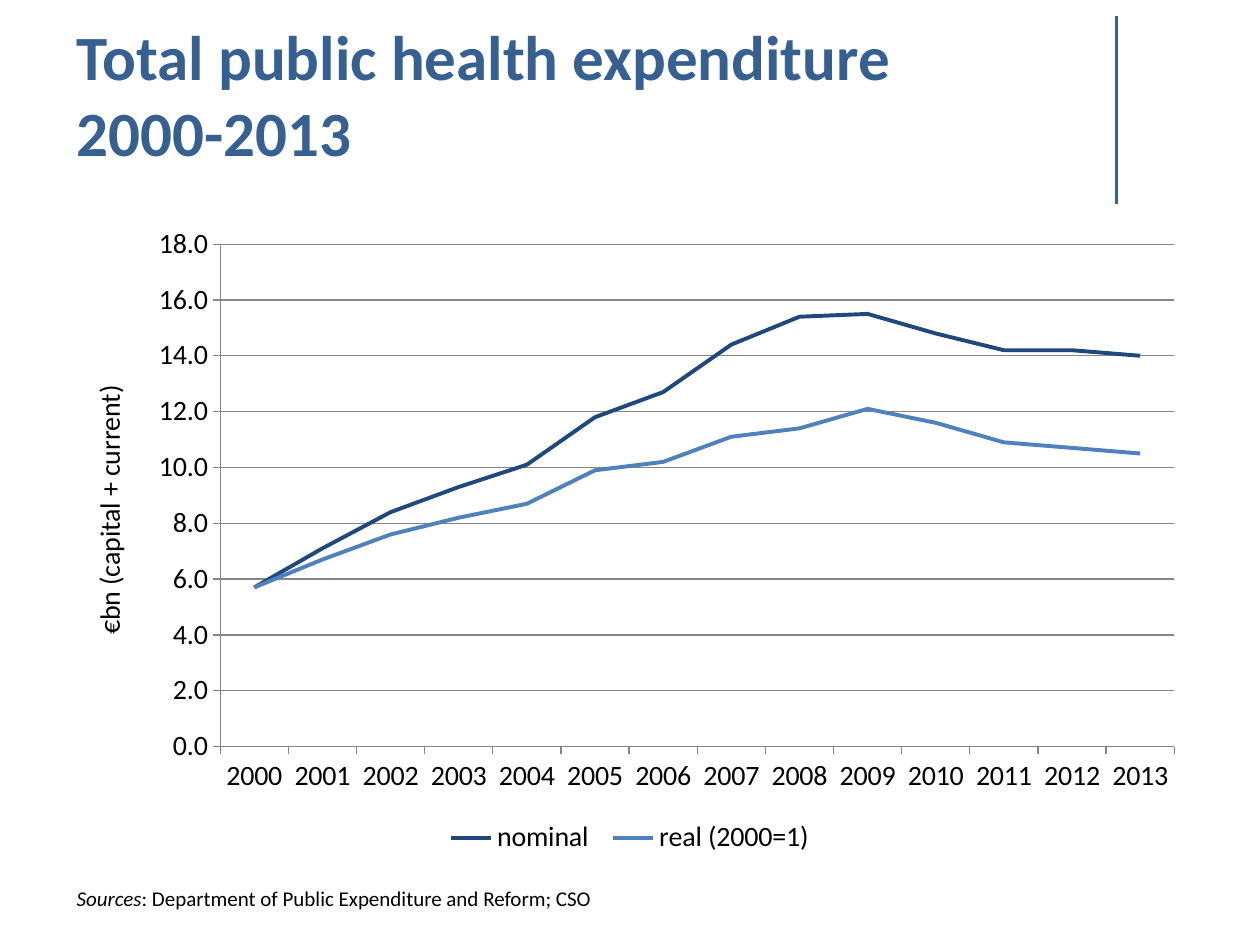
"""Build a slide with a line chart of public health expenditure."""
from lxml.etree import SubElement
from pptx import Presentation
from pptx.chart.data import CategoryChartData
from pptx.dml.color import RGBColor
from pptx.enum.chart import XL_CHART_TYPE, XL_LEGEND_POSITION, XL_TICK_MARK
from pptx.enum.shapes import MSO_CONNECTOR
from pptx.enum.text import MSO_ANCHOR, MSO_AUTO_SIZE, PP_ALIGN
from pptx.oxml.ns import qn
from pptx.util import Inches, Pt

BLUE = RGBColor(0x37, 0x60, 0x92)
NAVY = RGBColor(0x1F, 0x49, 0x7D)
SKY = RGBColor(0x4F, 0x81, 0xBD)
GREY = RGBColor(0x86, 0x86, 0x86)
BLACK = RGBColor(0, 0, 0)


def style(font, size, color, **extra):
    font.color.rgb = color
    for key, value in {"name": "Calibri", "size": Pt(size), **extra}.items():
        setattr(font, key, value)


deck = Presentation()
deck.slide_width, deck.slide_height = Inches(10), Inches(7.5)
slide = deck.slides.add_slide(deck.slide_layouts[5])

rule = slide.shapes.add_connector(
    MSO_CONNECTOR.STRAIGHT, Inches(8.86), Inches(0.13), Inches(8.86), Inches(1.62))
rule.line.color.rgb = BLUE
rule.line.width = Pt(1.5)
SubElement(rule._element.spPr, qn("a:effectLst"))

title = slide.shapes.title
place = {"left": 0.51, "top": 0.44, "width": 8.25, "height": 0.95}
for key, value in place.items():
    setattr(title, key, Inches(value))
frame = title.text_frame
frame.text = "Total public health expenditure\v2000-2013"
frame.auto_size = MSO_AUTO_SIZE.NONE
frame.vertical_anchor = MSO_ANCHOR.BOTTOM
head = frame.paragraphs[0]
head.alignment = PP_ALIGN.LEFT
for run in head.runs:
    style(run.font, 36, BLUE, bold=True)

data = CategoryChartData(number_format="#,##0.0")
data.categories = [str(year) for year in range(2000, 2014)]
data.add_series("nominal ", [5.7, 7.1, 8.4, 9.3, 10.1, 11.8, 12.7,
                             14.4, 15.4, 15.5, 14.8, 14.2, 14.2, 14])
data.add_series("real (2000=1)", [5.7, 6.7, 7.6, 8.2, 8.7, 9.9, 10.2,
                                  11.1, 11.4, 12.1, 11.6, 10.9, 10.7, 10.5])
chart = slide.shapes.add_chart(
    XL_CHART_TYPE.LINE, Inches(0.5), Inches(1.7), Inches(9), Inches(5.13), data).chart
style(chart.font, 16, BLACK)
chart.has_title = False
chart.has_legend = True
chart.legend.position = XL_LEGEND_POSITION.BOTTOM
chart.legend.include_in_layout = False
chart.plots[0].vary_by_categories = False
for series, color in zip(chart.plots[0].series, (NAVY, SKY)):
    series.smooth = False
    series.format.line.color.rgb = color
    series.format.line.width = Pt(2.25)

years, costs = chart.category_axis, chart.value_axis
costs.has_major_gridlines = True
for part in (years, costs, costs.major_gridlines):
    part.format.line.color.rgb = GREY
    part.format.line.width = Pt(0.75)
for axis in (years, costs):
    axis.major_tick_mark = XL_TICK_MARK.OUTSIDE
    axis.minor_tick_mark = XL_TICK_MARK.NONE
costs.minimum_scale, costs.maximum_scale, costs.major_unit = 0, 18, 2
costs.tick_labels.number_format = "#,##0.0"
costs.tick_labels.number_format_is_linked = False
label = costs.axis_title.text_frame
label.text = "€bn (capital + current)"
style(label.paragraphs[0].runs[0].font, 16, BLACK, bold=False)

note = slide.shapes.add_textbox(Inches(0.51), Inches(6.98), Inches(4.33), Inches(0.3))
note.text_frame.word_wrap = False
note.text_frame.auto_size = MSO_AUTO_SIZE.SHAPE_TO_FIT_TEXT
line = note.text_frame.paragraphs[0]
for text, slant in (("Sources", True),
                    (": Department of Public Expenditure and Reform; CSO", False)):
    run = line.add_run()
    run.text = text
    style(run.font, 12, BLACK, italic=slant)

deck.save("out.pptx")
